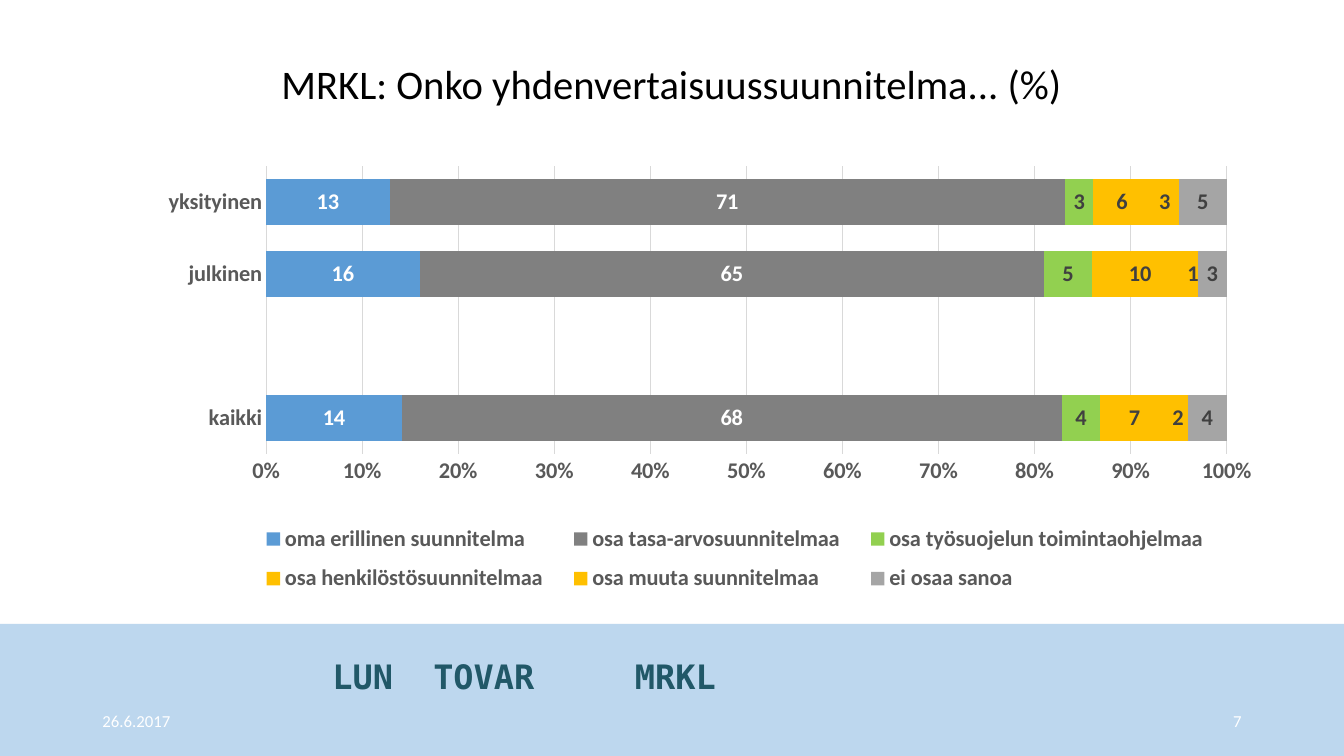
from lxml import etree
from pptx import Presentation
from pptx import util as u
from pptx.chart import data as chart_data
from pptx.dml import color
from pptx.enum import chart as charts, shapes, text
from pptx.oxml import ns

FONT = "Calibri"
GRID_COLOUR = "D9D9D9"
AXIS_COLOUR = "595959"
LIGHT, DARK = "FFFFFF", "404040"

# The empty category separates the total from the two sectors
CATEGORIES = ["kaikki", "", "julkinen", "yksityinen"]
# Name, values, bar colour, label colour
SERIES = [
    ("oma erillinen suunnitelma", (14, None, 16, 13), "5B9BD5", LIGHT),
    ("osa tasa-arvosuunnitelmaa", (68, None, 65, 71), "808080", LIGHT),
    ("osa työsuojelun toimintaohjelmaa", (4, None, 5, 3), "92D050", DARK),
    ("osa henkilöstösuunnitelmaa", (7, None, 10, 6), "FFC000", DARK),
    ("osa muuta suunnitelmaa", (2, None, 1, 3), "FFC000", DARK),
    ("ei osaa sanoa", (4, None, 3, 5), "A5A5A5", DARK),
]


def rgb(hex_colour):
    return color.RGBColor.from_string(hex_colour)


def style_font(font, size, hex_colour, bold=False, name=FONT):
    font.name = name
    font.size = u.Pt(size)
    font.bold = bold
    font.color.rgb = rgb(hex_colour)


def place(shape, left, top, width, height):
    shape.left, shape.top = u.Cm(left), u.Cm(top)
    shape.width, shape.height = u.Cm(width), u.Cm(height)


def write(shape, words, size, hex_colour, align=text.PP_ALIGN.LEFT, **font_options):
    frame = shape.text_frame
    frame.word_wrap = True
    frame.vertical_anchor = text.MSO_ANCHOR.MIDDLE
    paragraph = frame.paragraphs[0]
    paragraph.alignment = align
    run = paragraph.add_run()
    run.text = words
    style_font(run.font, size, hex_colour, **font_options)
    return paragraph


def add_text(slide, box, words, size, hex_colour, **options):
    shape = slide.shapes.add_textbox(*map(u.Cm, box))
    return write(shape, words, size, hex_colour, **options)


def add_band(slide, box, hex_colour):
    band = slide.shapes.add_shape(shapes.MSO_SHAPE.RECTANGLE, *map(u.Cm, box))
    band.shadow.inherit = False
    band.fill.solid()
    band.fill.fore_color.rgb = rgb(hex_colour)
    band.line.fill.background()


def set_tabs(paragraph, *positions):
    properties = paragraph._p.get_or_add_pPr()
    tabs = etree.SubElement(properties, ns.qn("a:tabLst"))
    for position in positions:
        etree.SubElement(tabs, ns.qn("a:tab"), pos=str(u.Cm(position)), algn="l")


def set_layout(parent, index, x, y, width, height, inner=False):
    """Place a chart part by fractions of the chart area."""
    for old in parent.findall(ns.qn("c:layout")):
        parent.remove(old)
    layout = etree.Element(ns.qn("c:layout"))
    manual = etree.SubElement(layout, ns.qn("c:manualLayout"))
    settings = [("layoutTarget", "inner")] if inner else []
    settings += [("xMode", "edge"), ("yMode", "edge"),
                 ("x", x), ("y", y), ("w", width), ("h", height)]
    for tag, value in settings:
        etree.SubElement(manual, ns.qn("c:" + tag), val=str(value))
    parent.insert(index, layout)


def style_axes(chart):
    for axis in (chart.category_axis, chart.value_axis):
        axis.major_tick_mark = axis.minor_tick_mark = charts.XL_TICK_MARK.NONE
        style_font(axis.tick_labels.font, 16, AXIS_COLOUR, bold=True)

    chart.value_axis.has_major_gridlines = True
    chart.value_axis.format.line.fill.background()
    chart.value_axis.tick_labels.number_format = "0%"
    chart.value_axis.tick_labels.number_format_is_linked = False
    for line in (chart.category_axis.format.line,
                 chart.value_axis.major_gridlines.format.line):
        line.color.rgb = rgb(GRID_COLOUR)
        line.width = u.Pt(0.75)


def add_plan_chart(slide, box):
    data = chart_data.CategoryChartData()
    data.categories = CATEGORIES
    for name, values, _, _ in SERIES:
        data.add_series(name, values)
    chart = slide.shapes.add_chart(
        charts.XL_CHART_TYPE.BAR_STACKED_100, *map(u.Cm, box), data).chart
    chart.has_title = False
    style_font(chart.font, 16, "000000", bold=True)
    style_axes(chart)

    # Bars and value labels
    plot = chart.plots[0]
    plot.gap_width, plot.overlap = 58, 100
    plot.vary_by_categories = False
    for series, (_, _, fill, label_colour) in zip(plot.series, SERIES):
        series.format.fill.solid()
        series.format.fill.fore_color.rgb = rgb(fill)
        series.data_labels.show_value = True
        style_font(series.data_labels.font, 16, label_colour, bold=True)

    # Legend and plot positions
    chart.has_legend = True
    legend = chart.legend
    legend.position = charts.XL_LEGEND_POSITION.BOTTOM
    legend.include_in_layout = False
    style_font(legend.font, 16, AXIS_COLOUR, bold=True)
    set_layout(legend._element, 1, 0.13, 0.79, 0.85, 0.2)
    plot_area = chart._chartSpace.chart.plotArea
    set_layout(plot_area, 0, 0.15, 0.03, 0.83, 0.63, inner=True)


def main():
    presentation = Presentation()
    presentation.slide_width, presentation.slide_height = u.Cm(33.87), u.Cm(19.05)
    slide = presentation.slides.add_slide(presentation.slide_layouts[5])

    # Footer band with the organisations
    add_band(slide, (0, 15.72, 33.87, 3.33), "BDD7EE")
    organisations = add_text(slide, (8.13, 16.41, 17.6, 1.27), "LUN\tTOVAR\tMRKL", 24,
                             "215868", bold=True, name="DejaVu Sans Mono")
    set_tabs(organisations, 2.54, 7.62)

    # Title
    title = slide.shapes.title
    place(title, 2.33, 1.02, 29.21, 2.29)
    heading = write(title, "MRKL: Onko yhdenvertaisuussuunnitelma... (%)", 29,
                    "000000", align=text.PP_ALIGN.CENTER)
    heading.line_spacing = 0.9

    # Chart
    add_plan_chart(slide, (2.33, 3.84, 29.21, 11.51))

    # Date and slide number
    add_text(slide, (2.33, 17.65, 7.62, 1.02), "26.6.2017", 12, "FFFFFF")
    add_text(slide, (23.92, 17.65, 7.62, 1.02), "7", 12, "FFFFFF",
             align=text.PP_ALIGN.RIGHT)

    presentation.save("out.pptx")


if __name__ == "__main__":
    main()
